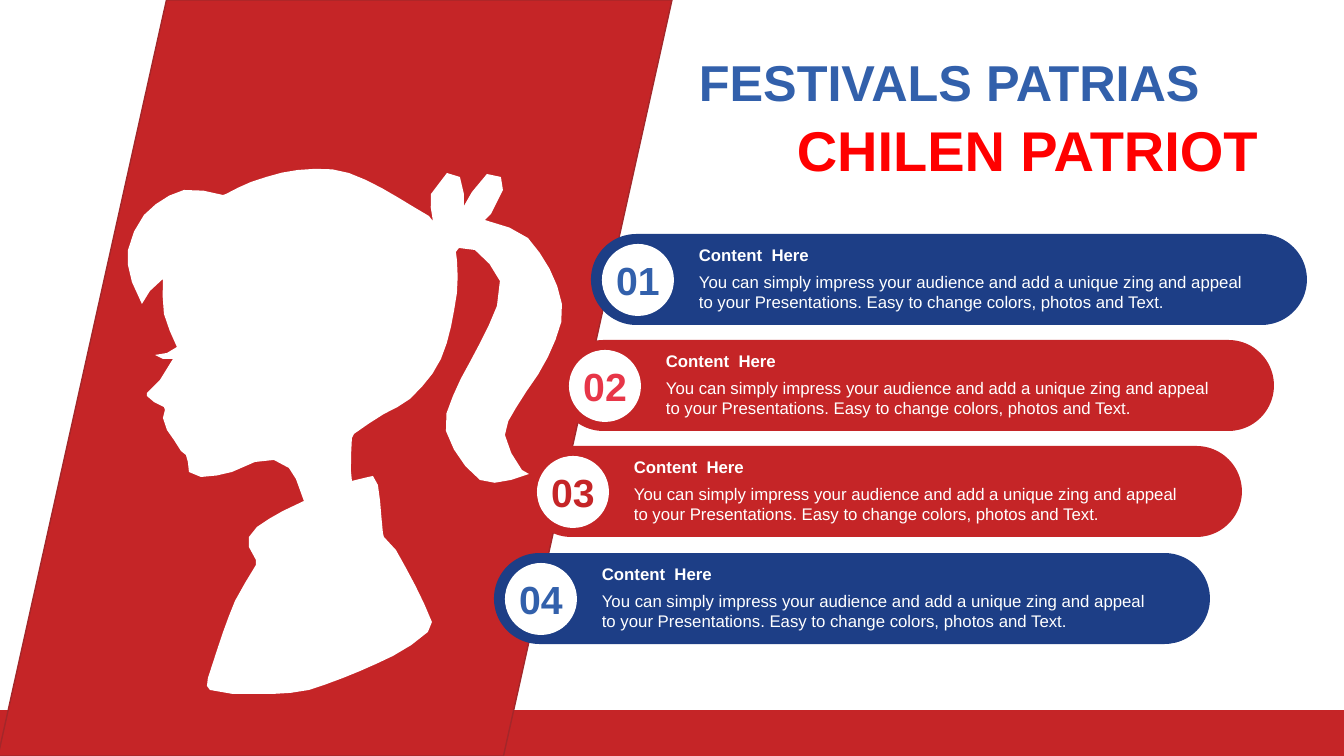
"""Build the patriotic festival slide with four staggered content bars."""
from itertools import pairwise

from pptx import Presentation
from pptx.dml.color import RGBColor
from pptx.enum.shapes import MSO_SHAPE
from pptx.enum.text import MSO_ANCHOR, MSO_AUTO_SIZE, PP_ALIGN
from pptx.util import Pt

THEME = {
    "font": "Arial",
    "white": "FFFFFF", "crimson": "C52527", "edge": "A3272A", "navy": "1D3E86",
    "blue": "3260AB", "coral": "E73648", "red": "FF0000",
    "title": 36, "subtitle": 40, "number": 28, "body": 12,
}
BODY = ("You can simply impress your audience and add a unique zing and appeal "
        "to your Presentations. Easy to change colors, photos and Text.")
CARDS = [
    ("01", "navy", "blue", "Content  Here", BODY),
    ("02", "crimson", "coral", "Content  Here", BODY),
    ("03", "crimson", "crimson", "Content  Here", BODY),
    ("04", "navy", "blue", "Content  Here", BODY),
]
TITLES = [
    ("CHILEN PATRIOT", (787, 110, 521, 78), "subtitle", "red"),
    ("FESTIVALS PATRIAS", (689, 45, 574, 72), "title", "blue"),
]
GIRL = [
    [(163, 279), (164, 314), (177, 347)],
    [(177, 347), (167, 353), (155, 355)],
    [(155, 355), (163, 359), (173, 359)],
    [(173, 359), (160, 380), (147, 393)],
    [(147, 393), (147, 396), (154, 402), (164, 407), (165, 410), (163, 418),
     (167, 430), (174, 440), (181, 451), (186, 455), (188, 462), (189, 472),
     (201, 477), (232, 472), (255, 462), (274, 460), (289, 468), (296, 479),
     (304, 501)],
    [(304, 501), (283, 511), (257, 527), (249, 537), (249, 547), (256, 560),
     (256, 565), (235, 601), (208, 678), (207, 686), (210, 690), (233, 694)],
    [(233, 694), (272, 694)],
    [(272, 694), (309, 690), (393, 656), (428, 632), (432, 622), (396, 550),
     (384, 537), (383, 533), (378, 485), (373, 476), (364, 478), (352, 481)],
    [(352, 481), (351, 471), (352, 438), (354, 434), (384, 414), (410, 399),
     (441, 359), (457, 293), (457, 260), (456, 252), (459, 248), (475, 250),
     (500, 281), (497, 306), (479, 345), (453, 396), (446, 431), (480, 480),
     (511, 480), (529, 474)],
    [(529, 474), (522, 470), (505, 435), (516, 408), (548, 357), (562, 304),
     (528, 238), (488, 221), (485, 220)],
    [(485, 220), (491, 214), (503, 190), (501, 177), (487, 174), (472, 192),
     (464, 206)],
    [(464, 206), (464, 194), (460, 177), (447, 173), (431, 194), (433, 221)],
    [(433, 221), (429, 216), (349, 173), (298, 170), (251, 182), (226, 194),
     (223, 195)],
    [(223, 195), (184, 190), (144, 215), (128, 250), (128, 265), (132, 282),
     (142, 304)],
    [(142, 304), (150, 291), (163, 279)],
]
SLIDE_W, SLIDE_H = 1344, 756
BAR_X, BAR_Y, BAR_W, BAR_H = 591, 234, 716, 91
SHIFT_X, SHIFT_Y = -97, 319
CHORD = 18
PX = 914400 / 100.8


def emu(*lengths):
    return [round(n * PX) for n in lengths]


def rgb(name):
    return RGBColor.from_string(THEME[name])


def paint(sp, fill, edge=None):
    sp.shadow.inherit = False
    sp.fill.solid()
    sp.fill.fore_color.rgb = rgb(fill)
    if edge:
        sp.line.color.rgb = rgb(edge)
        sp.line.width = Pt(1)
    else:
        sp.line.fill.background()
    return sp


def add_block(s, kind, box, fill, edge=None):
    return paint(s.shapes.add_shape(kind, *emu(*box)), fill, edge)


def add_text(s, text, box, size, color, bold=True, align=PP_ALIGN.LEFT,
             anchor=MSO_ANCHOR.TOP):
    tf = s.shapes.add_textbox(*emu(*box)).text_frame
    frame = {"word_wrap": True, "auto_size": MSO_AUTO_SIZE.SHAPE_TO_FIT_TEXT,
             "vertical_anchor": anchor}
    for key, value in frame.items():
        setattr(tf, key, value)
    p = tf.paragraphs[0]
    p.alignment = align
    r = p.add_run()
    r.text = text
    font = {"name": THEME["font"], "size": Pt(THEME[size]), "bold": bold}
    for key, value in font.items():
        setattr(r.font, key, value)
    r.font.color.rgb = rgb(color)


def smooth(run):
    """Yield points along a curve through every point of the run."""
    pts = [complex(*xy) for xy in run]
    ends = [pts[0], *pts, pts[-1]]
    tangents = [(b - a) / abs(b - a) for a, b in zip(ends, ends[2:])]
    for (a, ta), (b, tb) in pairwise(zip(pts, tangents)):
        reach = abs(b - a) / 3
        c, d = a + ta * reach, b - tb * reach
        steps = max(1, round(abs(b - a) / CHORD))
        for step in range(1, steps + 1):
            t = step / steps
            u = 1 - t
            z = u**3 * a + 3 * u * u * t * c + 3 * u * t * t * d + t**3 * b
            yield emu(z.real, z.imag)


def add_girl(s):
    outline = [xy for run in GIRL for xy in smooth(run)]
    builder = s.shapes.build_freeform(*emu(*GIRL[0][0]))
    builder.add_line_segments(outline, close=True)
    paint(builder.convert_to_shape(), "white")


def add_card(s, i, card):
    number, fill, accent, heading, body = card
    gaps = len(CARDS) - 1
    x, y = BAR_X + SHIFT_X * i // gaps, BAR_Y + SHIFT_Y * i // gaps
    bar = add_block(s, MSO_SHAPE.ROUNDED_RECTANGLE, (x, y, BAR_W, BAR_H), fill)
    bar.adjustments[0] = 0.5
    add_block(s, MSO_SHAPE.OVAL, (x + 11, y + 10, 72, 72), "white")
    add_text(s, number, (x + 10, y + 17, 74, 57), "number", accent,
             align=PP_ALIGN.CENTER)
    add_text(s, body, (x + 98, y + 33, 571, 50), "body", "white", bold=False)
    add_text(s, heading, (x + 98, y + 6, 571, 30), "body", "white",
             anchor=MSO_ANCHOR.MIDDLE)


def main():
    prs = Presentation()
    prs.slide_width, prs.slide_height = emu(SLIDE_W, SLIDE_H)
    s = prs.slides.add_slide(prs.slide_layouts[6])
    add_block(s, MSO_SHAPE.RECTANGLE, (0, 710, SLIDE_W, 46), "crimson")
    add_block(s, MSO_SHAPE.PARALLELOGRAM, (-2, 0, 674, SLIDE_H), "crimson", "edge")
    for i, card in enumerate(CARDS):
        add_card(s, i, card)
    for text, box, size, color in TITLES:
        add_text(s, text, box, size, color, align=PP_ALIGN.JUSTIFY,
                 anchor=MSO_ANCHOR.MIDDLE)
    add_girl(s)
    prs.save("out.pptx")


if __name__ == "__main__":
    main()
